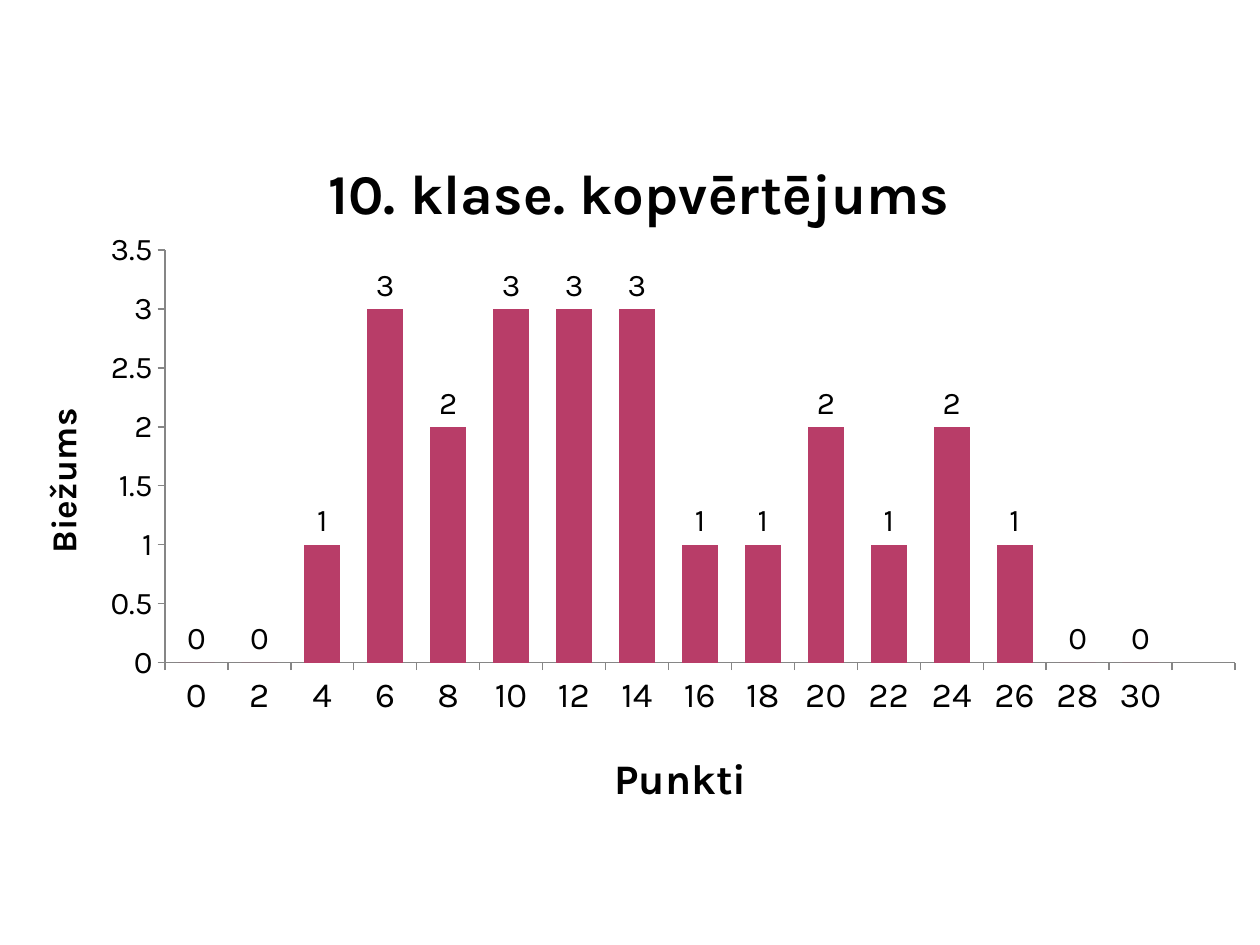
from pptx import Presentation
from pptx.chart.data import CategoryChartData
from pptx.dml.color import RGBColor
from pptx.enum.chart import XL_CHART_TYPE as ChartType
from pptx.enum.chart import XL_LABEL_POSITION as LabelPosition
from pptx.enum.chart import XL_TICK_MARK as TickMark
from pptx.oxml import parse_xml
from pptx.oxml.ns import nsdecls, qn
from pptx.util import Pt

SCALE = 914400 / 126
FONT = "Karla"
COLORS = {"text": "000000", "bar": "B83D68", "axis": "868686"}
SLIDE_SIZE = (1260, 945)
CHART_BOX = (0, 118, 1260, 708)
POINTS = [str(points) for points in range(0, 31, 2)] + [""]
FREQUENCIES = [0, 0, 1, 3, 2, 3, 3, 3, 1, 1, 2, 1, 2, 1, 0, 0, None]


def px(length):
    """Turn pixels into EMU."""
    return round(length * SCALE)


def color(name):
    """Look up a named colour."""
    return RGBColor.from_string(COLORS[name])


def format_font(font, size, bold=False):
    """Apply the chart typeface at a given size."""
    font.name = FONT
    font.size = Pt(size)
    font.bold = bold
    font.color.rgb = color("text")


def write_title(title, text, size):
    """Write a bold chart or axis title."""
    paragraph = title.text_frame.paragraphs[0]
    run = paragraph.add_run()
    run.text = text
    format_font(run.font, size, bold=True)


def place(element, index, box, left, top, width=None, height=None):
    """Pin a chart part at pixels relative to the chart box."""
    for layout in element.findall(qn("c:layout")):
        element.remove(layout)
    values = {"x": left / box[2], "y": top / box[3]}
    target = ""
    if width:
        target = '<c:layoutTarget val="inner"/>'
        values.update(w=width / box[2], h=height / box[3])
    modes = "".join(f'<c:{key}Mode val="edge"/>' for key in "xy")
    sizes = "".join(f'<c:{key} val="{value:.4f}"/>' for key, value in values.items())
    element.insert(index, parse_xml(
        f'<c:layout {nsdecls("c")}><c:manualLayout>{target}{modes}{sizes}'
        "</c:manualLayout></c:layout>"))


def format_axis(axis, title, title_size, label_size):
    """Style one axis with its title, ticks and labels."""
    axis.has_major_gridlines = False
    axis.major_tick_mark = TickMark.OUTSIDE
    axis.minor_tick_mark = TickMark.NONE
    axis.format.line.color.rgb = color("axis")
    axis.format.line.width = Pt(0.75)
    format_font(axis.tick_labels.font, label_size)
    axis.has_title = True
    write_title(axis.axis_title, title, title_size)


def add_histogram(slide, box):
    """Add the frequency column chart in the given box."""
    data = CategoryChartData()
    data.categories = POINTS
    data.add_series("Series 1", FREQUENCIES)
    chart = slide.shapes.add_chart(
        ChartType.COLUMN_CLUSTERED, *map(px, box), data).chart
    format_font(chart.font, 10)
    chart.has_legend = False
    chart.has_title = True
    write_title(chart.chart_title, "10. klase. kopvērtējums", 32)
    format_axis(chart.category_axis, "Punkti", 24, 20)
    format_axis(chart.value_axis, "Biežums", 20, 18)
    chart.value_axis.minimum_scale = 0
    chart.value_axis.maximum_scale = 3.5
    chart.value_axis.major_unit = 0.5
    chart.value_axis.tick_labels.number_format = "General"
    chart.value_axis.tick_labels.number_format_is_linked = False

    plot = chart.plots[0]
    plot.gap_width = 74
    plot.vary_by_categories = False
    fill = plot.series[0].format.fill
    fill.solid()
    fill.fore_color.rgb = color("bar")
    labels = plot.series[0].data_labels
    labels.show_value = True
    labels.position = LabelPosition.OUTSIDE_END
    format_font(labels.font, 18)

    plot_area = chart.element.find(".//" + qn("c:plotArea"))
    place(plot_area, 0, box, 165, 132, 1070, 413)
    titles = (
        (chart.chart_title, 318, 28),
        (chart.category_axis.axis_title, 607, 626),
        (chart.value_axis.axis_title, 33, 284),
    )
    for title, left, top in titles:
        place(title.element if hasattr(title, "element") else title._element,
              1, box, left, top)


def main():
    """Build and save the presentation."""
    presentation = Presentation()
    presentation.slide_width, presentation.slide_height = map(px, SLIDE_SIZE)
    slide = presentation.slides.add_slide(presentation.slide_layouts[6])
    add_histogram(slide, CHART_BOX)
    presentation.save("out.pptx")


if __name__ == "__main__":
    main()
